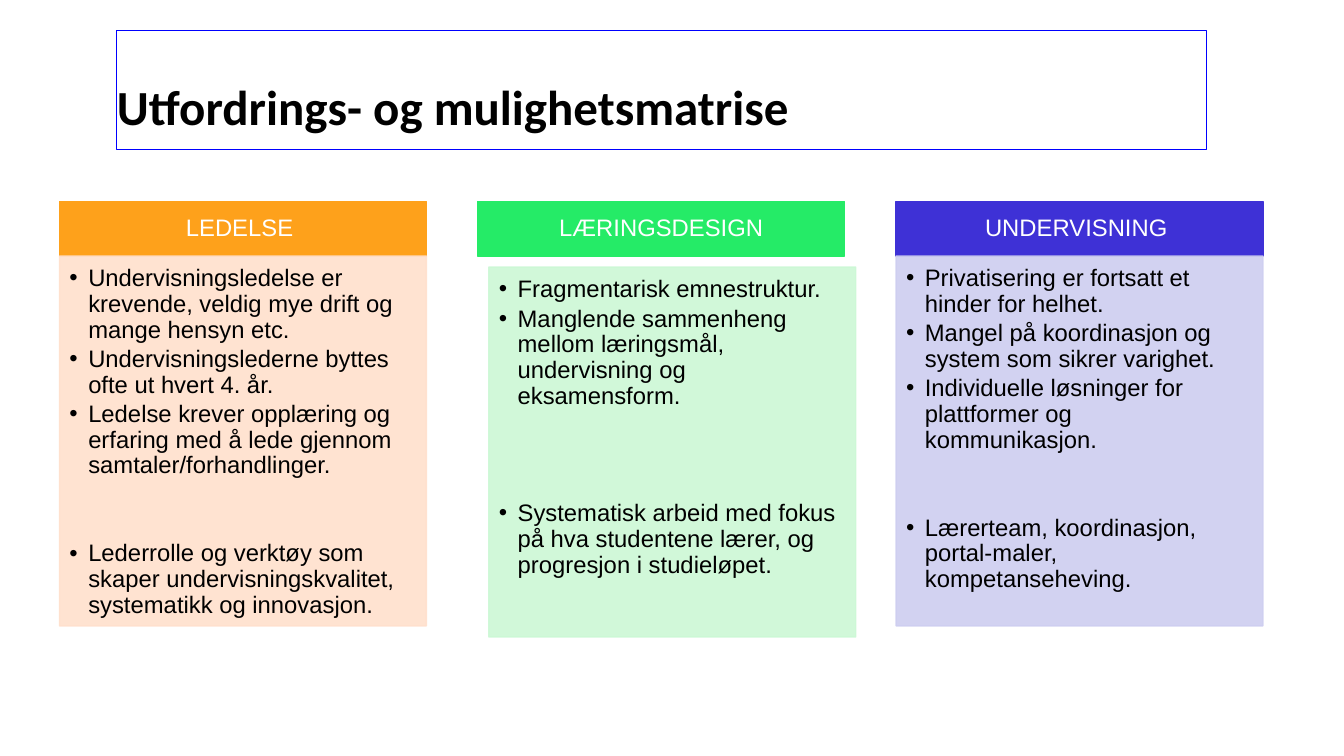
from dataclasses import dataclass

import pptx
import pptx.dml.color
import pptx.enum.shapes
import pptx.enum.text
import pptx.oxml.ns
import pptx.util
from lxml import etree
from pptx.util import Pt

COLORS = {
    "black": "000000", "white": "FFFFFF", "frame": "0000FF",
    "orange": "FEA11B", "peach": "FFE0CD",
    "green": "25EB67", "mint": "CCF8D5",
    "indigo": "3E31D6", "lavender": "CECEF0",
}
LEFT, TOP, PITCH = 42.5, 144, 298.8
WIDTH, HEAD_HEIGHT, BODY_HEIGHT = 262.1, 38.9, 264.2
TEXT_SIZE, LINE_SPACING, BULLET_INDENT = 17, 0.9, 13.5
BLANK_LINE = 21


@dataclass
class Column:
    heading: str
    head_color: str
    body_color: str
    challenges: list[str]
    opportunity: str
    gap_lines: int
    body_shift: float = 0


COLUMNS = [
    Column("LEDELSE ", "orange", "peach", [
        "Undervisningsledelse er krevende, veldig mye drift og mange hensyn etc.",
        "Undervisningslederne byttes ofte ut hvert 4. år.",
        "Ledelse krever opplæring og erfaring med å lede gjennom samtaler/forhandlinger.",
    ], "Lederrolle og verktøy som skaper undervisningskvalitet, systematikk og innovasjon.", 2),
    Column("LÆRINGSDESIGN", "green", "mint", [
        "Fragmentarisk emnestruktur.",
        "Manglende sammenheng mellom læringsmål, undervisning og eksamensform.",
    ], "Systematisk arbeid med fokus på hva studentene lærer, og progresjon i studieløpet.", 3, 7.9),
    Column("UNDERVISNING ", "indigo", "lavender", [
        "Privatisering er fortsatt et hinder for helhet.",
        "Mangel på koordinasjon og system som sikrer varighet.",
        "Individuelle løsninger for plattformer og kommunikasjon.",
    ], "Lærerteam, koordinasjon, portal-maler, kompetanseheving.", 2),
]


def rgb(name: str) -> pptx.dml.color.RGBColor:
    return pptx.dml.color.RGBColor.from_string(COLORS[name])


def set_insets(tf, left: float, top: float, right: float, bottom: float) -> None:
    tf.word_wrap = True
    tf.margin_left, tf.margin_top = Pt(left), Pt(top)
    tf.margin_right, tf.margin_bottom = Pt(right), Pt(bottom)


def style_runs(p, font: str, size: float, color: str, bold: bool = False) -> None:
    p.line_spacing = LINE_SPACING
    for r in p.runs:
        r.font.name, r.font.size, r.font.bold = font, Pt(size), bold
        r.font.color.rgb = rgb(color)


def add_panel(slide, left: float, top: float, height: float, color: str, opacity: int = 100):
    s = slide.shapes.add_shape(pptx.enum.shapes.MSO_SHAPE.RECTANGLE,
                               Pt(left), Pt(top), Pt(WIDTH), Pt(height))
    s.shadow.inherit = False
    s.fill.solid()
    s.fill.fore_color.rgb = rgb(color)
    s.line.color.rgb = rgb(color)
    s.line.width = Pt(1)
    if opacity < 100:
        for clr in s._element.spPr.iter(pptx.oxml.ns.qn("a:srgbClr")):
            etree.SubElement(clr, pptx.oxml.ns.qn("a:alpha"), val=str(opacity * 1000))
    return s


def add_bullet(p) -> None:
    pPr = p._p.get_or_add_pPr()
    pPr.set("marL", str(Pt(BULLET_INDENT)))
    pPr.set("indent", str(-Pt(BULLET_INDENT)))
    etree.SubElement(pPr, pptx.oxml.ns.qn("a:buFont"), typeface="Arial")
    etree.SubElement(pPr, pptx.oxml.ns.qn("a:buChar"), char="•")


def add_title(slide, text: str) -> None:
    s = slide.shapes.add_textbox(Pt(83.5), Pt(21.6), Pt(778.3), Pt(85.3))
    s.line.color.rgb = rgb("frame")
    s.line.width = Pt(0.75)
    tf = s.text_frame
    set_insets(tf, 0, 38, 0, 0)
    tf.text = text
    style_runs(tf.paragraphs[0], "Calibri", 35, "black", bold=True)


def add_column(slide, column: Column, left: float) -> None:
    head = add_panel(slide, left, TOP, HEAD_HEIGHT, column.head_color)
    tf = head.text_frame
    set_insets(tf, 9.4, 5.8, 9.4, 5.8)
    tf.vertical_anchor = pptx.enum.text.MSO_ANCHOR.MIDDLE
    tf.text = column.heading
    p = tf.paragraphs[0]
    p.alignment = pptx.enum.text.PP_ALIGN.CENTER
    style_runs(p, "Arial", TEXT_SIZE, "white")

    body = add_panel(slide, left + column.body_shift, TOP + HEAD_HEIGHT + column.body_shift,
                     BODY_HEIGHT, column.body_color, opacity=90)
    tf = body.text_frame
    set_insets(tf, 7.2, 7.2, 9.4, 10.8)
    tf.vertical_anchor = pptx.enum.text.MSO_ANCHOR.TOP
    tf.text = "\n".join([*column.challenges, column.opportunity])
    for p in tf.paragraphs:
        add_bullet(p)
        p.level = 1
        p.alignment = pptx.enum.text.PP_ALIGN.LEFT
        p.space_after = Pt(2.55)
        style_runs(p, "Arial", TEXT_SIZE, "black")
    tf.paragraphs[-1].space_before = Pt(column.gap_lines * BLANK_LINE)


def main() -> None:
    prs = pptx.Presentation()
    prs.slide_width, prs.slide_height = Pt(960), Pt(540)
    slide = prs.slides.add_slide(prs.slide_layouts[6])
    for i, column in enumerate(COLUMNS):
        add_column(slide, column, LEFT + i * PITCH)
    add_title(slide, "Utfordrings- og mulighetsmatrise")
    prs.save("out.pptx")


if __name__ == "__main__":
    main()
